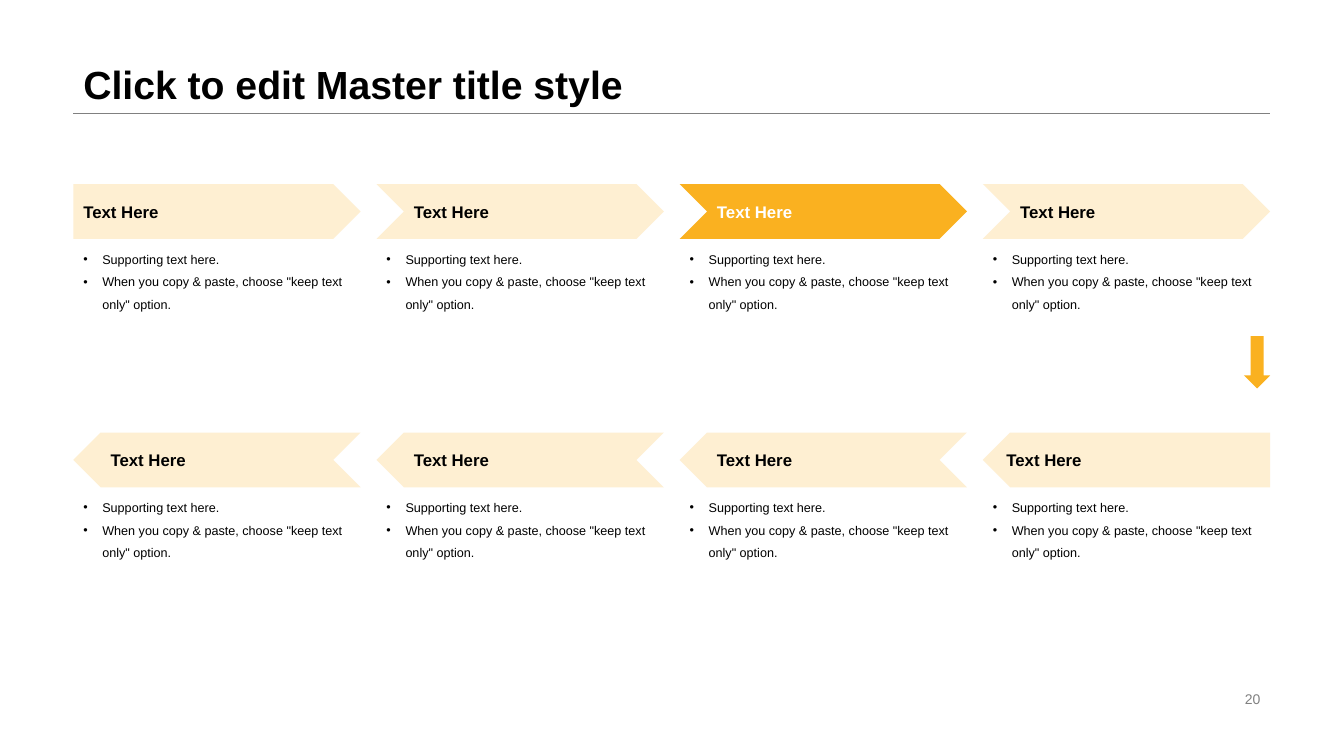
from lxml import etree
from pptx import Presentation
from pptx.dml.color import RGBColor
from pptx.enum.shapes import MSO_CONNECTOR, MSO_SHAPE
from pptx.enum.text import MSO_ANCHOR, PP_ALIGN
from pptx.oxml.ns import qn
from pptx.util import Cm, Pt

PENTAGON, CHEVRON = MSO_SHAPE.PENTAGON, MSO_SHAPE.CHEVRON
DETAIL_FORM, DOWN_ARROW = MSO_SHAPE.SNIP_2_SAME_RECTANGLE, MSO_SHAPE.DOWN_ARROW
STRAIGHT = MSO_CONNECTOR.STRAIGHT
TOP, MIDDLE, BOTTOM = MSO_ANCHOR.TOP, MSO_ANCHOR.MIDDLE, MSO_ANCHOR.BOTTOM
LEFT, RIGHT = PP_ALIGN.LEFT, PP_ALIGN.RIGHT

BLACK = RGBColor(0x00, 0x00, 0x00)
WHITE = RGBColor(0xFF, 0xFF, 0xFF)
GRAY = RGBColor(0x80, 0x80, 0x80)
CREAM = RGBColor(0xFE, 0xEF, 0xD2)
AMBER = RGBColor(0xFA, 0xB1, 0x20)

TITLE = "Click to edit Master title style"
PAGE_NUMBER = "20"
DETAILS = [
    "Supporting text here.",
    'When you copy & paste, choose "keep text only" option.',
]
NORMAL, ACTIVE = (CREAM, BLACK), (AMBER, WHITE)
STEP_ROWS = [
    [
        ("Text Here", PENTAGON, NORMAL),
        ("Text Here", CHEVRON, NORMAL),
        ("Text Here", CHEVRON, ACTIVE),
        ("Text Here", CHEVRON, NORMAL),
    ],
    [
        ("Text Here", CHEVRON, NORMAL),
        ("Text Here", CHEVRON, NORMAL),
        ("Text Here", CHEVRON, NORMAL),
        ("Text Here", PENTAGON, NORMAL),
    ],
]

MARGIN, CONTENT_WIDTH = Cm(1.85), Cm(30.16)
CONTENT_RIGHT = MARGIN + CONTENT_WIDTH
TITLE_BOTTOM = Cm(2.84)
COLUMN_GAP = Cm(0.4)
COLUMNS = len(STEP_ROWS[0])
STEP_WIDTH = (CONTENT_WIDTH - COLUMN_GAP * (COLUMNS - 1)) // COLUMNS
STEP_HEIGHT, DETAIL_HEIGHT = Cm(1.38), Cm(2.49)
FIRST_ROW, ROW_PITCH = Cm(4.64), Cm(6.26)
TURN_WIDTH, TURN_HEIGHT, TURN_TOP = Cm(0.66), Cm(1.32), Cm(8.47)
INDENT = Cm(0.48)


def write(box, lines, size, color, bold=False, align=LEFT, anchor=TOP,
          wrap=True, spacing=None, bullets=False):
    frame = box.text_frame
    frame.text = "\n".join(lines)
    frame.word_wrap = wrap
    frame.vertical_anchor = anchor
    for paragraph in frame.paragraphs:
        paragraph.alignment = align
        if spacing:
            paragraph.line_spacing = spacing
        if bullets:
            properties = paragraph._p.get_or_add_pPr()
            properties.set("marL", str(INDENT))
            properties.set("indent", str(-INDENT))
            etree.SubElement(properties, qn("a:buFont")).set("typeface", "Arial")
            etree.SubElement(properties, qn("a:buChar")).set("char", "•")
        for run in paragraph.runs:
            run.font.name = "Arial"
            run.font.size = Pt(size)
            run.font.bold = bold
            run.font.color.rgb = color


def add_form(slide, form, left, top, width, height, fill=None):
    shape = slide.shapes.add_shape(form, left, top, width, height)
    shape.shadow.inherit = False
    shape.line.fill.background()
    if fill is None:
        shape.fill.background()
    else:
        shape.fill.solid()
        shape.fill.fore_color.rgb = fill
    return shape


def add_step(slide, label, form, colors, left, top, backward):
    fill, text_color = colors
    step = add_form(slide, form, left, top, STEP_WIDTH, STEP_HEIGHT, fill)
    if backward:
        step._element.spPr.find(qn("a:xfrm")).set("flipH", "1")
    write(step, [label], 12, text_color, bold=True, anchor=MIDDLE, wrap=False)

    detail = add_form(slide, DETAIL_FORM, left, top + STEP_HEIGHT,
                      STEP_WIDTH, DETAIL_HEIGHT)
    detail.adjustments[0] = 0
    detail.adjustments[1] = 0
    write(detail, DETAILS, 9, BLACK, spacing=1.5, bullets=True)


def main():
    deck = Presentation()
    deck.slide_width, deck.slide_height = Cm(33.87), Cm(19.05)
    slide = deck.slides.add_slide(deck.slide_layouts[6])

    rule = slide.shapes.add_connector(
        STRAIGHT, MARGIN, TITLE_BOTTOM, CONTENT_RIGHT, TITLE_BOTTOM)
    rule.line.color.rgb = GRAY
    rule.line.width = Pt(0.25)
    etree.SubElement(rule._element.spPr, qn("a:effectLst"))

    title = slide.shapes.add_textbox(MARGIN, 0, CONTENT_WIDTH, TITLE_BOTTOM)
    write(title, [TITLE], 28, BLACK, bold=True, anchor=BOTTOM, spacing=0.9)

    page_width = Cm(8.08)
    page = slide.shapes.add_textbox(
        CONTENT_RIGHT - page_width, Cm(17.32), page_width, Cm(0.58))
    write(page, [PAGE_NUMBER], 10, GRAY, align=RIGHT, anchor=MIDDLE)

    for row, steps in enumerate(STEP_ROWS):
        for column, (label, form, colors) in enumerate(steps):
            left = MARGIN + column * (STEP_WIDTH + COLUMN_GAP)
            top = FIRST_ROW + row * ROW_PITCH
            add_step(slide, label, form, colors, left, top, backward=row == 1)

    add_form(slide, DOWN_ARROW, CONTENT_RIGHT - TURN_WIDTH, TURN_TOP,
             TURN_WIDTH, TURN_HEIGHT, AMBER)

    deck.save("out.pptx")


if __name__ == "__main__":
    main()
